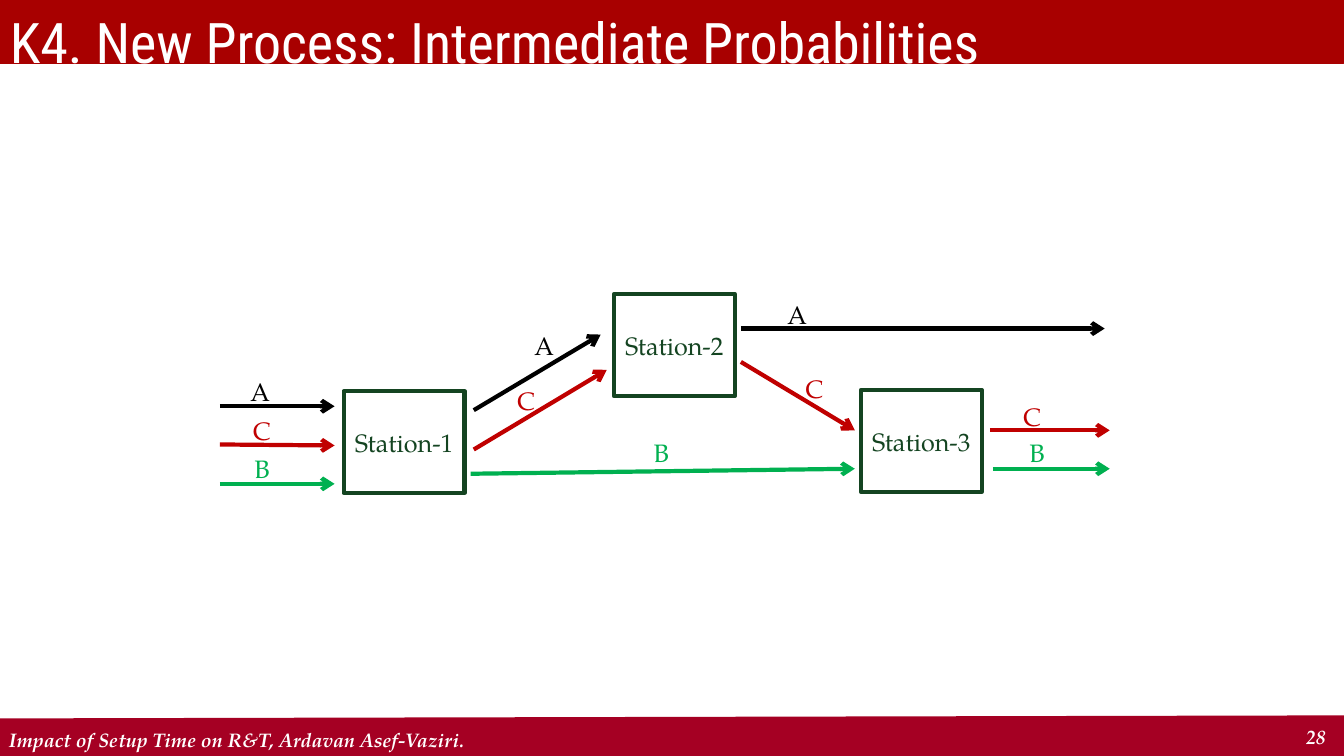
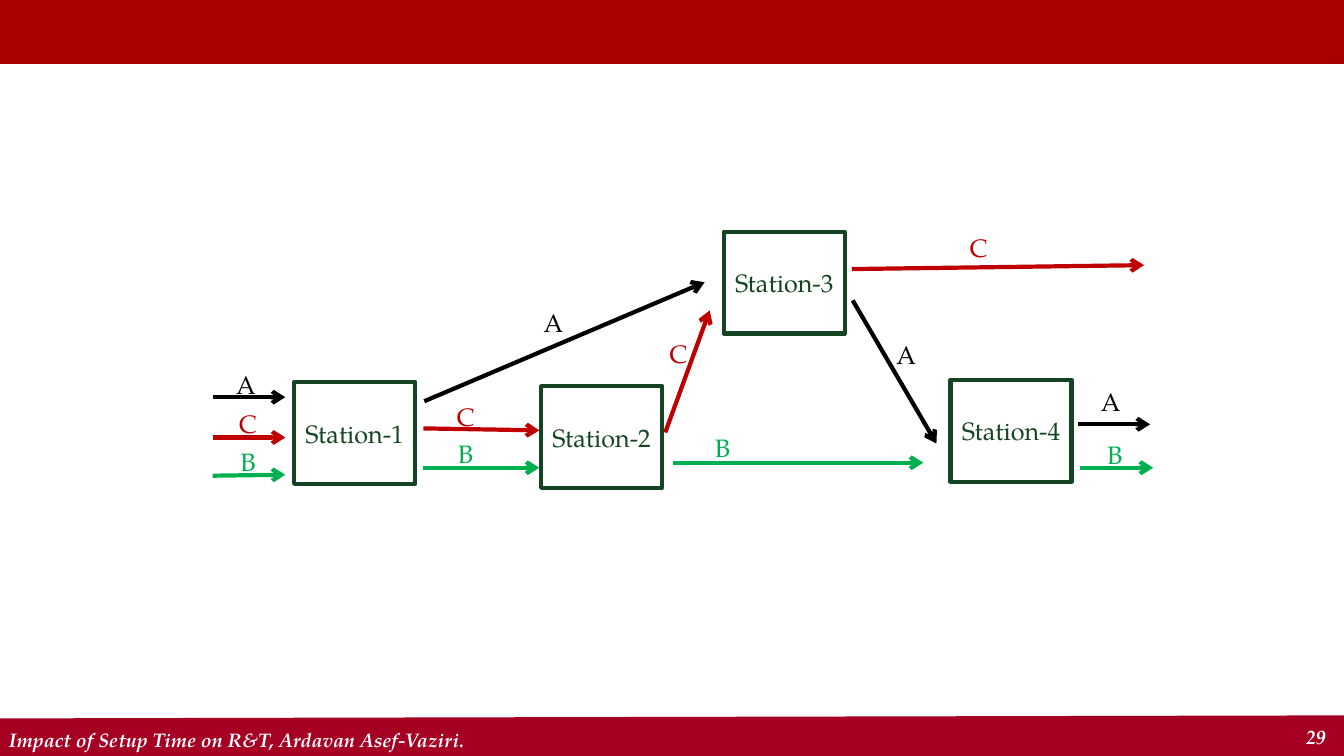
from dataclasses import dataclass

from pptx import Presentation
from pptx.dml.color import RGBColor
from pptx.enum.shapes import MSO_CONNECTOR, MSO_SHAPE
from pptx.enum.text import MSO_ANCHOR, PP_ALIGN
from pptx.oxml.xmlchemy import OxmlElement
from pptx.util import Pt

STRAIGHT = MSO_CONNECTOR.STRAIGHT
RECT = MSO_SHAPE.RECTANGLE
MIDDLE, BOTTOM = MSO_ANCHOR.MIDDLE, MSO_ANCHOR.BOTTOM
LEFT, CENTER = PP_ALIGN.LEFT, PP_ALIGN.CENTER


@dataclass(frozen=True)
class Theme:
    band: str = "A80000"
    footer: str = "A50023"
    light: str = "FFFFFF"
    station: str = "144421"
    title_font: str = "Roboto Condensed"
    body_font: str = "TeX Gyre Pagella"
    title_size: float = 40
    body_size: float = 18
    footer_size: float = 14
    stroke: float = 3
    footer_stroke: float = 29.25


THEME = Theme()
SLIDE_W, SLIDE_H = 960, 540
STATION_W, STATION_H = 86.4, 72.7
LABEL_H = 28.8
FIRST_PAGE = 28
FOOTER = "Impact of Setup Time on R&T, Ardavan Asef-Vaziri."

# product: colour, label width
PRODUCTS = {"A": ("000000", 28.8), "B": ("00B050", 25.9), "C": ("C00000", 27.4)}

# stations: name, left, top; flows: product, start, end, label corner
SLIDES = [
    {
        "title": "K4. New Process: Intermediate Probabilities",
        "stations": [
            ("Station-1", 245.5, 279.4),
            ("Station-2", 438.5, 210.2),
            ("Station-3", 614.9, 278.6),
        ],
        "flows": [
            ("A", (157, 290.2), (239, 290.2), (171.4, 265)),
            ("C", (157, 317.5), (239, 318.2), (173.5, 293)),
            ("B", (157, 345.6), (239, 345.6), (174.2, 320.4)),
            ("A", (338.4, 293), (429.1, 239), (374.4, 232.6)),
            ("C", (338.4, 321.1), (433.4, 264.2), (362.2, 271.4)),
            ("B", (336.2, 338.4), (610.6, 334.8), (459.4, 308.9)),
            ("C", (529.2, 258.5), (610.6, 307.4), (568.1, 262.8)),
            ("A", (529.2, 234.7), (789.1, 234.7), (555.1, 210.2)),
            ("C", (707, 307.4), (792.7, 307.4), (723.6, 283)),
            ("B", (709.2, 334.8), (792.7, 334.8), (727.9, 308.9)),
        ],
    },
    {
        "title": None,
        "stations": [
            ("Station-1", 210.2, 272.9),
            ("Station-2", 386.6, 275.8),
            ("Station-3", 517, 165.6),
            ("Station-4", 679, 271.4),
        ],
        "flows": [
            ("A", (151.9, 283.7), (203.8, 283.7), (161.3, 259.9)),
            ("C", (151.9, 312.5), (203.8, 312.5), (163.4, 288)),
            ("B", (151.9, 339.8), (203.8, 339.1), (164.2, 315.4)),
            ("A", (303.1, 286.6), (503.3, 201.6), (380.9, 216)),
            ("C", (302.4, 306), (385.2, 307.4), (319, 283)),
            ("B", (302.4, 334.1), (385.2, 334.1), (319.7, 309.6)),
            ("C", (475.2, 308.9), (506.9, 221.8), (470.9, 238.3)),
            ("B", (481, 330.5), (659.5, 330.5), (503.3, 305.3)),
            ("C", (608.4, 192.2), (817.2, 189.4), (685.4, 162)),
            ("A", (609.1, 214.6), (668.9, 316.8), (632.9, 239)),
            ("A", (769.7, 303.1), (821.5, 303.1), (779, 272.2)),
            ("B", (771.8, 334.1), (823.7, 334.1), (783.4, 310.3)),
        ],
    },
]


def rgb(color):
    return RGBColor.from_string(color)


def write(sp, text, color, size, font=THEME.body_font, anchor=MIDDLE,
          align=LEFT, wrap=True, accent=None):
    tf = sp.text_frame
    tf.word_wrap = wrap
    tf.vertical_anchor = anchor
    p = tf.paragraphs[0]
    p.text = text
    p.alignment = align
    p.font.name = font
    p.font.size = Pt(size)
    p.font.color.rgb = rgb(color)
    p.font.bold = p.font.italic = accent


def add_text(s, box, text, color, size, **style):
    write(s.shapes.add_textbox(*map(Pt, box)), text, color, size, **style)


def add_rect(s, box, line, width, fill=None):
    sp = s.shapes.add_shape(RECT, *map(Pt, box))
    sp.shadow.inherit = False
    if fill:
        sp.fill.solid()
        sp.fill.fore_color.rgb = rgb(fill)
    else:
        sp.fill.background()
    sp.line.color.rgb = rgb(line)
    sp.line.width = Pt(width)
    return sp


def add_line(s, start, end, color, width, arrow=False):
    cx = s.shapes.add_connector(STRAIGHT, *map(Pt, start + end))
    cx.line.color.rgb = rgb(color)
    cx.line.width = Pt(width)
    if arrow:
        tail = OxmlElement("a:tailEnd")
        tail.set("type", "arrow")
        cx.line._get_or_add_ln().append(tail)
    cx._element.spPr.append(OxmlElement("a:effectLst"))


def add_frame(s, title, page):
    add_line(s, (-0.7, 527.8), (962.6, 525.6), THEME.footer, THEME.footer_stroke)
    add_rect(s, (0, -0.7, SLIDE_W, 46.1), THEME.band, 0.75, THEME.band)
    for box, text in [((-0.7, 515.5, 781.2, 24.5), FOOTER),
                      ((925.9, 513.4, 33.8, 24.5), str(page))]:
        add_text(s, box, text, THEME.light, THEME.footer_size,
                 anchor=BOTTOM, accent=True)
    if title:
        add_text(s, (0, -1.4, SLIDE_W, 61.2), title, THEME.light,
                 THEME.title_size, font=THEME.title_font)


def add_process(s, stations, flows):
    for name, left, top in stations:
        sp = add_rect(s, (left, top, STATION_W, STATION_H),
                      THEME.station, THEME.stroke)
        write(sp, name, THEME.station, THEME.body_size, align=CENTER, wrap=False)
    for product, start, end, corner in flows:
        color, width = PRODUCTS[product]
        add_line(s, start, end, color, THEME.stroke, arrow=True)
        add_text(s, corner + (width, LABEL_H), product, color,
                 THEME.body_size, align=CENTER, wrap=False)


def main():
    prs = Presentation()
    prs.slide_width, prs.slide_height = Pt(SLIDE_W), Pt(SLIDE_H)
    blank = prs.slide_layouts[6]
    for page, content in enumerate(SLIDES, FIRST_PAGE):
        s = prs.slides.add_slide(blank)
        add_frame(s, content["title"], page)
        add_process(s, content["stations"], content["flows"])
    prs.save("out.pptx")


if __name__ == "__main__":
    main()
